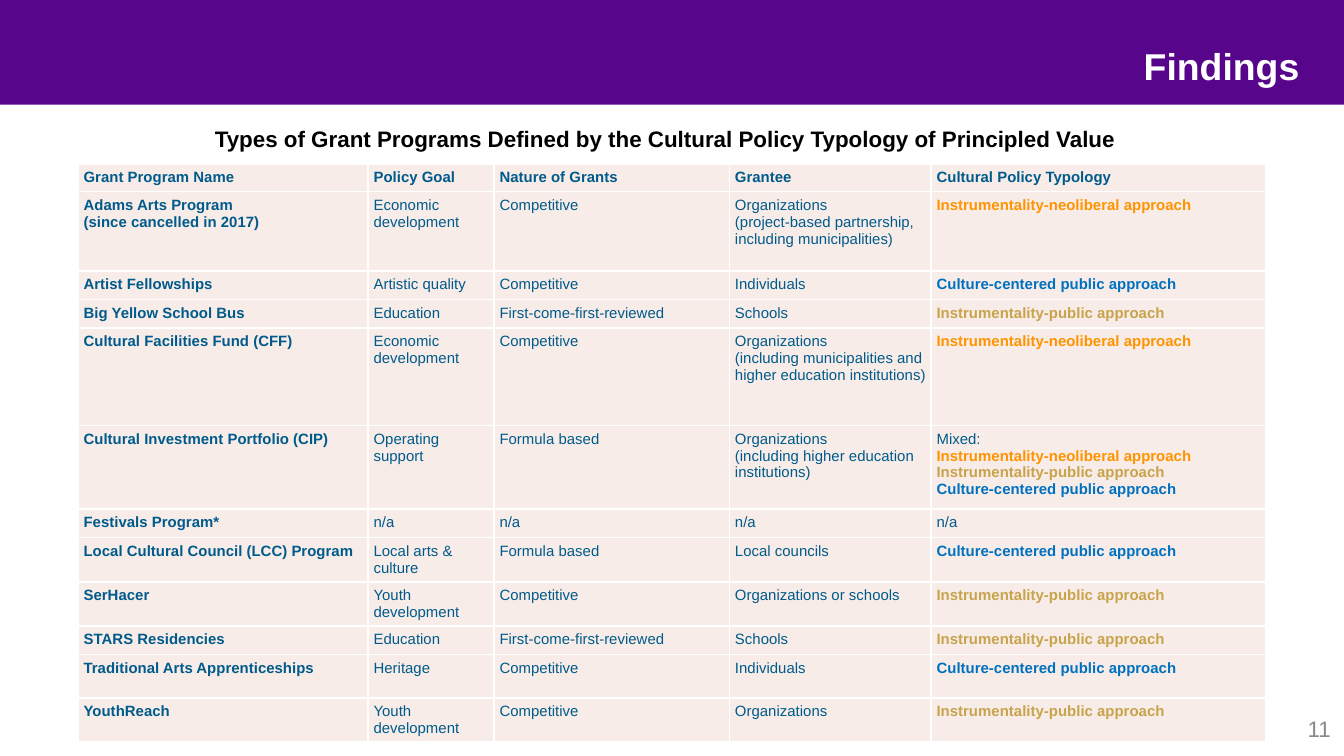
from dataclasses import dataclass

from lxml import etree
from pptx import Presentation
from pptx.dml.color import RGBColor
from pptx.enum import shapes, text
from pptx.oxml.ns import qn
from pptx.util import Cm, Pt


@dataclass(frozen=True)
class Theme:
    font: str = "Arial"
    violet: str = "57068C"
    white: str = "FFFFFF"
    black: str = "000000"
    gray: str = "898989"
    navy: str = "005A8B"
    cell: str = "F7ECE7"
    orange: str = "FF9300"
    gold: str = "C8A34B"
    blue: str = "0070C0"
    head: int = 20
    body: int = 12
    small: int = 8


class Deck:
    def __init__(self, theme):
        self.theme = theme
        self.file = Presentation()
        self.file.slide_width, self.file.slide_height = Cm(25.4), Cm(14.29)
        self.slide = self.file.slides.add_slide(self.file.slide_layouts[5])

    def style(self, para, size, color, bold=False, align=text.PP_ALIGN.LEFT):
        para.alignment = align
        font = para.font
        font.name, font.size, font.bold = self.theme.font, Pt(size), bold
        font.color.rgb = RGBColor.from_string(color)

    def place(self, shape, box):
        shape.left, shape.top, shape.width, shape.height = map(Cm, box)

    def band(self, box, color):
        shape = self.slide.shapes.add_shape(
            shapes.MSO_SHAPE.RECTANGLE, *map(Cm, box))
        shape.shadow.inherit = False
        shape.fill.solid()
        shape.fill.fore_color.rgb = RGBColor.from_string(color)
        shape.line.fill.background()
        # Send behind the title
        shape.element.getparent().insert(2, shape.element)

    def title(self, words, box):
        shape = self.slide.shapes.title
        self.place(shape, box)
        frame = shape.text_frame
        frame.text = words
        frame.auto_size = text.MSO_AUTO_SIZE.NONE
        frame.vertical_anchor = text.MSO_ANCHOR.TOP
        frame.margin_left = frame.margin_right = 0
        frame.margin_top = frame.margin_bottom = 0
        self.style(frame.paragraphs[0], self.theme.head, self.theme.white,
                   True, text.PP_ALIGN.RIGHT)

    def label(self, words, box, color, bold=False, align=text.PP_ALIGN.LEFT):
        frame = self.slide.shapes.add_textbox(*map(Cm, box)).text_frame
        frame.word_wrap = True
        frame.vertical_anchor = text.MSO_ANCHOR.MIDDLE
        frame.text = words
        self.style(frame.paragraphs[0], self.theme.body, color, bold, align)

    def border(self, cell, color, width):
        props = cell._tc.get_or_add_tcPr()
        for spot, side in enumerate(("lnL", "lnR", "lnT", "lnB")):
            line = etree.Element(qn(f"a:{side}"), w=str(Pt(width)))
            fill = etree.SubElement(line, qn("a:solidFill"))
            etree.SubElement(fill, qn("a:srgbClr"), val=color)
            props.insert(spot, line)

    def table(self, rows, spot, widths, heights, tints):
        grid = self.slide.shapes.add_table(
            len(rows), len(widths), *map(Cm, spot),
            Cm(sum(widths)), Cm(sum(heights))).table
        for col, width in zip(grid.columns, widths):
            col.width = Cm(width)
        for row, height in zip(grid.rows, heights):
            row.height = Cm(height)
        for r, row in enumerate(rows):
            for c, words in enumerate(row):
                cell = grid.cell(r, c)
                cell.fill.solid()
                cell.fill.fore_color.rgb = RGBColor.from_string(self.theme.cell)
                self.border(cell, self.theme.white, 1)
                cell.margin_left = cell.margin_right = Cm(0.1)
                cell.margin_top = cell.margin_bottom = Cm(0.1)
                cell.text = words
                for para in cell.text_frame.paragraphs:
                    bold = r == 0 or c == 0 or para.text in tints
                    color = tints.get(para.text, self.theme.navy)
                    self.style(para, self.theme.small, color, bold)


NEO = "Instrumentality-neoliberal approach"
PUBLIC = "Instrumentality-public approach"
CULTURE = "Culture-centered public approach"
COMP = "Competitive"
FIRST = "First-come-first-reviewed"
FORM = "Formula based"

ROWS = [
    ("Grant Program Name", "Policy Goal", "Nature of Grants", "Grantee",
     "Cultural Policy Typology"),
    ("Adams Arts Program\n(since cancelled in 2017)", "Economic development",
     COMP, "Organizations\n(project-based partnership, "
     "including municipalities)", NEO),
    ("Artist Fellowships", "Artistic quality", COMP, "Individuals", CULTURE),
    ("Big Yellow School Bus", "Education", FIRST, "Schools", PUBLIC),
    ("Cultural Facilities Fund (CFF)", "Economic development", COMP,
     "Organizations\n(including municipalities and "
     "higher education institutions)", NEO),
    ("Cultural Investment Portfolio (CIP)", "Operating support", FORM,
     "Organizations\n(including higher education institutions)",
     "\n".join(("Mixed:", NEO, PUBLIC, CULTURE))),
    ("Festivals Program*",) + ("n/a",) * 4,
    ("Local Cultural Council (LCC) Program", "Local arts & culture", FORM,
     "Local councils", CULTURE),
    ("SerHacer", "Youth development", COMP, "Organizations or schools",
     PUBLIC),
    ("STARS Residencies", "Education", FIRST, "Schools", PUBLIC),
    ("Traditional Arts Apprenticeships", "Heritage", COMP, "Individuals",
     CULTURE),
    ("YouthReach", "Youth development", COMP, "Organizations", PUBLIC),
]
WIDTHS = [5.48, 2.38, 4.45, 3.81, 6.32]
LOW, MID = 0.54, 0.82
HEIGHTS = [0.49, 1.5, LOW, LOW, 1.84, 1.58, LOW, MID, MID, LOW, MID, MID]


def main():
    theme = Theme()
    deck = Deck(theme)

    # Header band and title
    deck.band((0, 0, 25.4, 1.98), theme.violet)
    deck.title("Findings", (15.04, 0.81, 9.52, 0.76))

    # Grant program table
    tints = {NEO: theme.orange, PUBLIC: theme.gold, CULTURE: theme.blue}
    deck.table(ROWS, (1.48, 3.1), WIDTHS, HEIGHTS, tints)

    # Table caption and page number
    deck.label("Types of Grant Programs Defined by the Cultural Policy "
               "Typology of Principled Value", (3.81, 2.24, 17.78, 0.77),
               theme.black, bold=True)
    deck.label("11", (20.73, 13.46, 4.67, 0.61), theme.gray,
               align=text.PP_ALIGN.RIGHT)

    deck.file.save("out.pptx")


if __name__ == "__main__":
    main()
